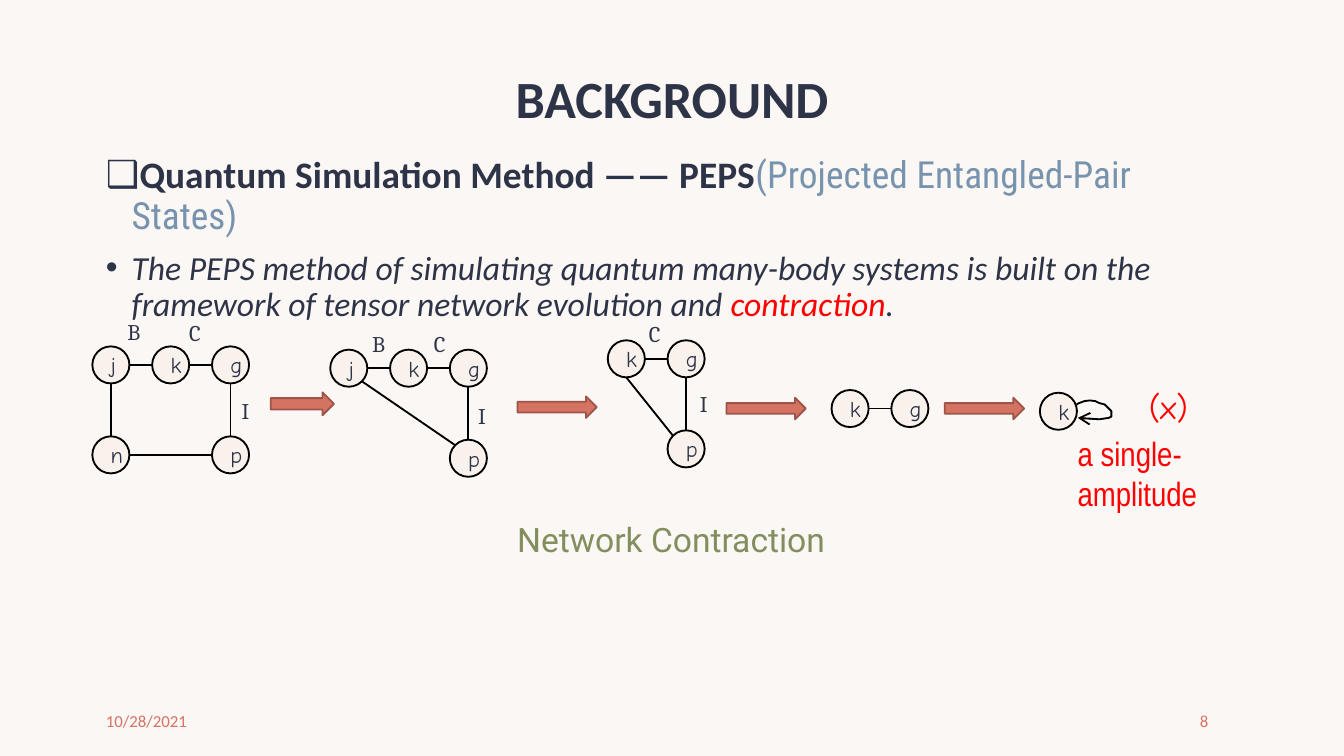
from dataclasses import dataclass

import pptx
import pptx.dml.color
import pptx.enum.shapes
import pptx.enum.text
import pptx.oxml.ns
import pptx.util
from lxml import etree

ALIGN = pptx.enum.text.PP_ALIGN
ANCHOR = pptx.enum.text.MSO_ANCHOR
SHAPE = pptx.enum.shapes.MSO_SHAPE
qn = pptx.oxml.ns.qn


@dataclass(frozen=True)
class Theme:
    background: str = "FBF7F4"
    ink: str = "2E3448"
    accent: str = "D47362"
    accent_line: str = "9D5549"
    node: str = "F8F1EC"
    line: str = "000000"
    alert: str = "FF0000"
    muted: str = "7893AE"
    caption: str = "838E5E"
    sans: str = "Calibri"
    title: int = 28
    heading: int = 20
    body: int = 18
    label: int = 12
    small: int = 9


THEME = Theme()
CELL = 0.1
NODE = 2.76
PITCH_X, PITCH_Y = 4.45, 6.7
SITES = {"top": (0, -0.5), "left": (-0.5, 0), "bottom": (0, 0.5), "right": (0.5, 0),
         "upper_left": (-0.35, -0.35), "lower_right": (0.35, 0.35)}
PLACES = {"j": (0, 0), "k": (1, 0), "g": (2, 0), "n": (0, 1), "p": (2, 1)}


def cells(*values):
    return [pptx.util.Inches(v * CELL) for v in values]


def rgb(value):
    return pptx.dml.color.RGBColor.from_string(value)


def add_text(p, text, font=THEME.sans, size=THEME.body, color=THEME.ink, bold=False, italic=False):
    r = p.add_run()
    r.text = text
    r.font.name, r.font.size = font, pptx.util.Pt(size)
    r.font.bold, r.font.italic = bold, italic
    r.font.color.rgb = rgb(color)


class Deck:
    def __init__(self, theme, columns, rows):
        self.theme = theme
        self.prs = pptx.Presentation()
        self.prs.slide_width, self.prs.slide_height = cells(columns, rows)
        self.s = self.prs.slides.add_slide(self.prs.slide_layouts[6])
        self.s.background.fill.solid()
        self.s.background.fill.fore_color.rgb = rgb(theme.background)

    def frame(self, box, anchor=ANCHOR.TOP):
        tf = self.s.shapes.add_textbox(*cells(*box)).text_frame
        tf.word_wrap = True
        tf.vertical_anchor = anchor
        return tf

    def text(self, box, text, align=ALIGN.LEFT, anchor=ANCHOR.TOP, spacing=1.0, **style):
        p = self.frame(box, anchor).paragraphs[0]
        p.alignment = align
        p.line_spacing = spacing
        add_text(p, text, **style)

    def bullets(self, box, items):
        tf = self.frame(box)
        for i, (mark, runs) in enumerate(items):
            p = tf.add_paragraph() if i else tf.paragraphs[0]
            pPr = p._p.get_or_add_pPr()
            indent = pptx.util.Inches(0.19)
            pPr.set("marL", str(indent))
            pPr.set("indent", str(-indent))
            etree.SubElement(pPr, qn("a:buFont")).set("typeface", "Arial")
            etree.SubElement(pPr, qn("a:buChar")).set("char", mark)
            p.line_spacing = 0.9
            p.space_before = pptx.util.Pt(7.5 if i else 0)
            for text, style in runs:
                add_text(p, text, **style)

    def shape(self, kind, box, fill, line):
        sp = self.s.shapes.add_shape(kind, *cells(*box))
        sp.shadow.inherit = False
        sp.fill.solid()
        sp.fill.fore_color.rgb = rgb(fill)
        self.outline(sp, line)
        return sp

    def outline(self, sp, color):
        sp.line.color.rgb = rgb(color)
        sp.line.width = pptx.util.Pt(1)

    def arrow(self, x, y, width, height=1.6):
        self.shape(SHAPE.RIGHT_ARROW, (x, y, width, height), self.theme.accent, self.theme.accent_line)

    def node(self, x, y, name):
        box = (x - NODE / 2, y - NODE / 2, NODE, NODE)
        tf = self.shape(SHAPE.OVAL, box, self.theme.node, self.theme.line).text_frame
        tf.vertical_anchor = ANCHOR.MIDDLE
        p = tf.paragraphs[0]
        p.alignment = ALIGN.CENTER
        add_text(p, name, font="Comic Neue", size=self.theme.label)

    def edge(self, start, end):
        straight = pptx.enum.shapes.MSO_CONNECTOR.STRAIGHT
        cxn = self.s.shapes.add_connector(straight, *cells(*start, *end))
        self.outline(cxn, self.theme.line)
        etree.SubElement(cxn._element.spPr, qn("a:effectLst"))

    def network(self, x, y, names, edges, labels=()):
        first = min(PLACES[name][0] for name in names)
        centers = {name: (x + (PLACES[name][0] - first) * PITCH_X, y + PLACES[name][1] * PITCH_Y)
                   for name in names}
        for a, site_a, b, site_b in edges:
            self.edge(*[tuple(c + NODE * d for c, d in zip(centers[name], SITES[site]))
                        for name, site in ((a, site_a), (b, site_b))])
        for name, center in centers.items():
            self.node(*center, name)
        for label, left, top in labels:
            self.text((left, top, 3.4, 3), label, font="Cambria", size=self.theme.label)

    def loop(self, points):
        start, *rest = [tuple(cells(*point)) for point in points]
        builder = self.s.shapes.build_freeform(*start)
        builder.add_line_segments(rest, close=False)
        sp = builder.convert_to_shape()
        sp.shadow.inherit = False
        sp.fill.background()
        self.outline(sp, self.theme.line)
        etree.SubElement(sp.line._get_or_add_ln(), qn("a:tailEnd")).set("type", "arrow")


def main():
    t = THEME
    deck = Deck(t, 100, 56.25)
    deck.text((6.9, 3.6, 86.2, 7.9), "BACKGROUND", ALIGN.CENTER, ANCHOR.MIDDLE, 0.9,
              size=t.title, bold=True)
    footer = dict(anchor=ANCHOR.MIDDLE, size=t.small, color=t.accent)
    deck.text((6.9, 52.15, 9.7, 3), "10/28/2021", **footer)
    deck.text((85.9, 52.15, 5, 3), "8", ALIGN.RIGHT, **footer)
    deck.bullets((6.9, 11.15, 86.2, 23.7), [
        ("❑", [("Quantum Simulation Method —— PEPS", dict(size=t.heading, bold=True)),
               ("(Projected Entangled-Pair States)",
                dict(font="Roboto Condensed", size=t.heading, color=t.muted))]),
        ("•", [("The PEPS method of simulating quantum many-body systems is built on the "
                "framework of tensor network evolution and ", dict(italic=True)),
               ("contraction", dict(italic=True, color=t.alert)),
               (".", dict(italic=True))]),
    ])
    deck.text((37.5, 38.15, 29.8, 4), "Network Contraction", font="Roboto", color=t.caption)

    jk = ("j", "right", "k", "left")
    kg = ("k", "right", "g", "left")
    gp = ("g", "bottom", "p", "top")
    jn = ("j", "bottom", "n", "top")
    np = ("n", "right", "p", "left")
    jp = ("j", "lower_right", "p", "upper_left")
    kp = ("k", "bottom", "p", "upper_left")
    deck.network(8.25, 27.15, "jgknp", [jk, kg, gp, jn, np],
                 [("I", 17, 29.05), ("B", 8.5, 23.2), ("C", 13.1, 23.25)])
    deck.network(25.95, 27.4, "jgkp", [jk, kg, gp, jp],
                 [("I", 34.6, 29.4), ("B", 26.7, 24.05), ("C", 31.3, 24.1)])
    deck.network(46.6, 26.7, "gkp", [kg, gp, kp], [("C", 47.3, 23.3), ("I", 51.1, 28.55)])
    deck.network(63.25, 30.4, "gk", [kg])
    deck.network(78.75, 30.6, "k", [])
    deck.loop([(80.1, 30.1), (80.3, 30), (80.7, 29.85), (81.1, 29.8), (81.5, 29.85), (81.8, 30),
               (82.2, 30.1), (82.5, 30.4), (82.7, 30.6), (82.7, 31), (82.5, 31.1), (81.8, 31.2),
               (80.2, 31.1)])
    deck.arrow(20.15, 29.2, 4.7, 1.7)
    for x, y in ((38.5, 29.5), (54.05, 29.6), (70.3, 29.6)):
        deck.arrow(x, y, 5.9)
    deck.text((84.5, 28.2, 5, 4), "(x)", font="Comic Neue", color=t.alert)
    deck.text((79.2, 31.7, 18.2, 4), "a single-amplitude", font="Arial Narrow", color=t.alert)
    deck.prs.save("out.pptx")


if __name__ == "__main__":
    main()
